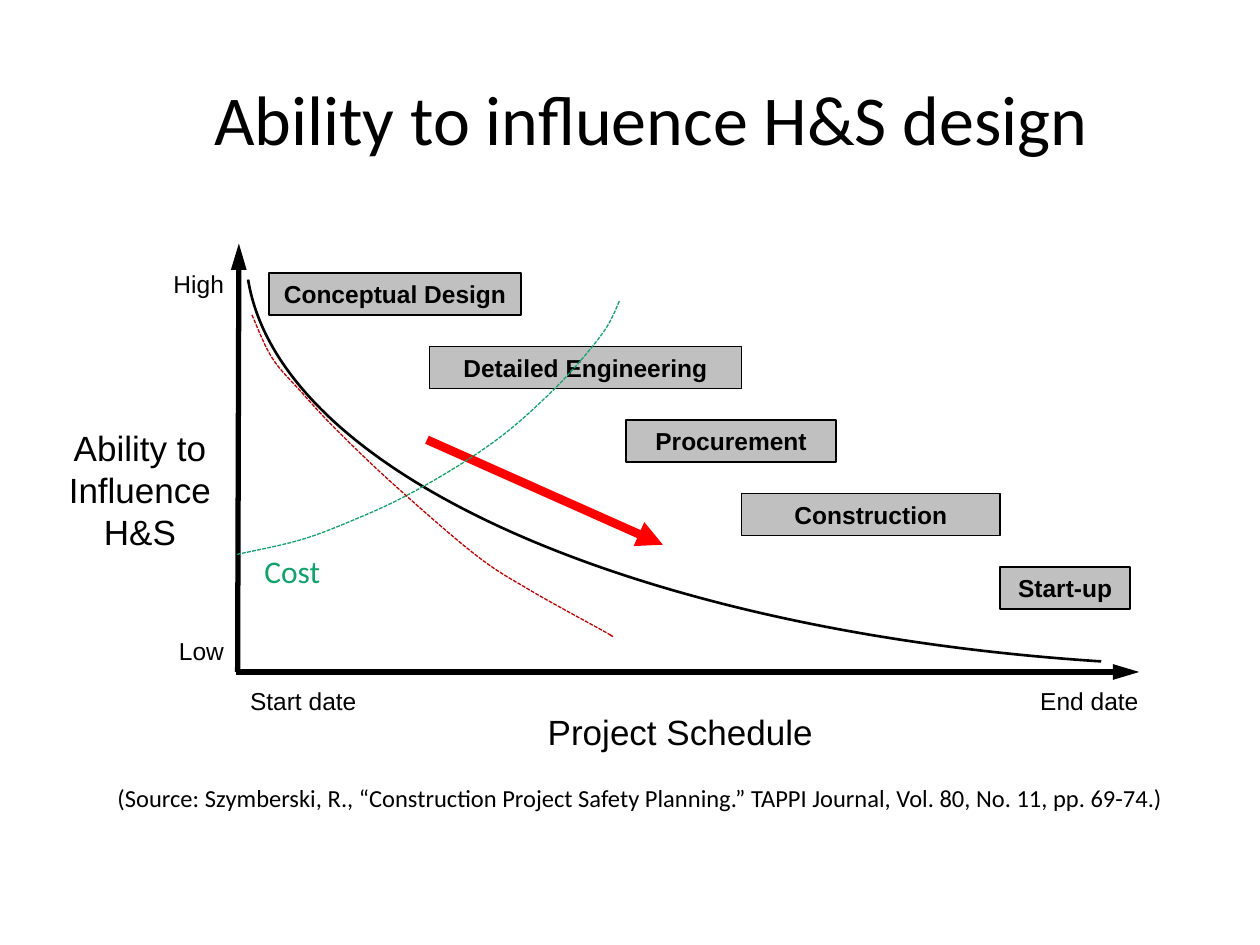
"""Build a slide on how the ability to influence H&S design falls over a project."""
from dataclasses import dataclass

from lxml import etree
from pptx import Presentation
from pptx.dml.color import RGBColor
from pptx.enum.dml import MSO_LINE
from pptx.enum.shapes import MSO_CONNECTOR, MSO_SHAPE
from pptx.enum.text import MSO_ANCHOR, PP_ALIGN
from pptx.oxml.ns import qn
from pptx.shapes.base import BaseShape
from pptx.slide import Slide
from pptx.util import Pt

LEFT, CENTER, RIGHT = PP_ALIGN.LEFT, PP_ALIGN.CENTER, PP_ALIGN.RIGHT
TOP, MIDDLE = MSO_ANCHOR.TOP, MSO_ANCHOR.MIDDLE
RECTANGLE, STRAIGHT = MSO_SHAPE.RECTANGLE, MSO_CONNECTOR.STRAIGHT
DASHED = MSO_LINE.SQUARE_DOT

BLACK = RGBColor(0x00, 0x00, 0x00)
GRAY = RGBColor(0xC0, 0xC0, 0xC0)
RED = RGBColor(0xFF, 0x00, 0x00)
DARK_RED = RGBColor(0xC0, 0x00, 0x00)
GREEN = RGBColor(0x12, 0xA2, 0x6B)

PHASE_TOP, PHASE_STEP, PHASE_HEIGHT = 156, 42, 24

Point = tuple[float, float]


@dataclass(frozen=True)
class Phase:
    """A project phase and its horizontal extent."""
    name: str
    left: float
    width: float


@dataclass(frozen=True)
class Label:
    """A piece of free-standing text."""
    text: str
    left: float
    top: float
    width: float
    height: float
    size: float = 14
    font: str = "Arial"
    align: PP_ALIGN = LEFT
    anchor: MSO_ANCHOR = TOP
    color: RGBColor = BLACK


@dataclass(frozen=True)
class Arrow:
    """A straight line with a head at its end."""
    start: Point
    end: Point
    width: float
    color: RGBColor = BLACK
    head_length: str = "lg"


PHASES = [
    Phase("Conceptual Design", 153.8, 144),
    Phase("Detailed Engineering", 245.3, 178.5),
    Phase("Procurement", 357.8, 120),
    Phase("Construction", 423.8, 147.7),
    Phase("Start-up", 571.5, 74.3),
]
LABELS = [
    Label("Ability to influence H&S design", 48, 18, 648, 98, 40, "Calibri", CENTER, MIDDLE),
    Label("(Source: Szymberski, R., “Construction Project Safety Planning.” "
          "TAPPI Journal, Vol. 80, No. 11, pp. 69-74.)", 60, 444, 624, 34.5, font="Calibri"),
    Label("High", 87.6, 150, 47.5, 24.5, align=RIGHT),
    Label("Low", 87.6, 360, 47.5, 26, align=RIGHT),
    Label("Start date", 135.8, 388.5, 83.5, 19.5),
    Label("End date", 577.2, 388.5, 80.5, 19.5, align=RIGHT),
    Label("Ability to Influence H&S", 22, 240, 116, 90, 20, align=CENTER),
    Label("Project Schedule", 291.5, 402.5, 194.5, 27.5, 20, align=CENTER),
    Label("Cost", 144, 312, 114, 29, 18, "Calibri", color=GREEN),
]
ARROWS = [
    Arrow((135.8, 384), (136.5, 139.2), 3),
    Arrow((135, 384), (651, 384), 3),
    Arrow((244, 251.3), (378.8, 311.3), 5, RED, "med"),
]
INFLUENCE_CONTROLS = [(141.8, 159.8), (159.8, 270.7), (362.2, 360.7), (629.3, 378)]
COST_KNOTS = [
    (135.4, 316.8), (172.8, 308.2), (206.6, 295.2), (232.6, 283), (261.4, 266.4),
    (285.8, 249.8), (306, 232.6), (326.2, 212.4), (345.6, 188.6), (354.2, 171.4),
]
DECLINE_KNOTS = [
    (144, 180), (155.5, 204.5), (172.1, 223.9), (191.5, 244.8), (224.6, 276.5),
    (271.4, 316.8), (302.4, 337), (346.3, 361.4), (348.5, 362.9),
]


def write_text(shape: BaseShape, text: str, *, size: float, font: str, align: PP_ALIGN,
               anchor: MSO_ANCHOR, color: RGBColor, bold: bool = False) -> None:
    """Put one formatted paragraph into a shape."""
    frame = shape.text_frame
    frame.word_wrap = True
    frame.vertical_anchor = anchor
    para = frame.paragraphs[0]
    para.alignment = align
    span = para.add_run()
    span.text = text
    span.font.size = Pt(size)
    span.font.name = font
    span.font.bold = bold
    span.font.color.rgb = color


def add_label(page: Slide, label: Label) -> None:
    """Draw a text box."""
    box = page.shapes.add_textbox(Pt(label.left), Pt(label.top), Pt(label.width), Pt(label.height))
    write_text(box, label.text, size=label.size, font=label.font, align=label.align,
               anchor=label.anchor, color=label.color)


def add_phase(page: Slide, phase: Phase, top: float) -> None:
    """Draw a phase as a gray bar."""
    bar = page.shapes.add_shape(RECTANGLE, Pt(phase.left), Pt(top), Pt(phase.width),
                                Pt(PHASE_HEIGHT))
    bar.shadow.inherit = False
    bar.fill.solid()
    bar.fill.fore_color.rgb = GRAY
    bar.line.color.rgb = BLACK
    bar.line.width = Pt(0.75)
    write_text(bar, phase.name, size=14, font="Arial", align=CENTER, anchor=MIDDLE,
               color=BLACK, bold=True)


def add_arrow(page: Slide, arrow: Arrow) -> None:
    """Draw a connector with a triangular head."""
    connector = page.shapes.add_connector(STRAIGHT, *map(Pt, arrow.start + arrow.end))
    connector.line.color.rgb = arrow.color
    connector.line.width = Pt(arrow.width)
    properties = connector._element.spPr
    etree.SubElement(properties.find(qn("a:ln")), qn("a:tailEnd"), type="triangle",
                     w="med", len=arrow.head_length)
    etree.SubElement(properties, qn("a:effectLst"))


def spline(knots: list[Point]) -> list[Point]:
    """Return the cubic control points of a smooth curve through all knots."""
    padded = [knots[0], *knots, knots[-1]]
    controls = [knots[0]]
    for before, start, end, after in zip(padded, padded[1:], padded[2:], padded[3:]):
        leave = tuple(s + (e - b) / 6 for b, s, e in zip(before, start, end))
        arrive = tuple(e - (a - s) / 6 for s, e, a in zip(start, end, after))
        controls += [leave, arrive, end]
    return controls


def add_curve(page: Slide, controls: list[Point], color: RGBColor, width: float,
              dash: MSO_LINE | None = None) -> None:
    """Draw an open, unfilled outline of cubic segments."""
    start, *rest = [(Pt(x), Pt(y)) for x, y in controls]
    builder = page.shapes.build_freeform(*start)
    builder.add_line_segments(rest, close=False)
    curve = builder.convert_to_shape()
    lines = list(curve._element.iter(qn("a:lnTo")))
    for first in range(0, len(lines), 3):
        cubic = etree.Element(qn("a:cubicBezTo"))
        lines[first].addprevious(cubic)
        for line in lines[first:first + 3]:
            cubic.append(line[0])
            line.getparent().remove(line)
    curve.shadow.inherit = False
    curve.fill.background()
    curve.line.color.rgb = color
    curve.line.width = Pt(width)
    curve.line.dash_style = dash


def main() -> None:
    """Assemble and save the deck."""
    deck = Presentation()
    deck.slide_width, deck.slide_height = Pt(720), Pt(540)
    page = deck.slides.add_slide(deck.slide_layouts[6])
    for index, phase in enumerate(PHASES):
        add_phase(page, phase, PHASE_TOP + index * PHASE_STEP)
    for label in LABELS:
        add_label(page, label)
    for arrow in ARROWS:
        add_arrow(page, arrow)
    add_curve(page, INFLUENCE_CONTROLS, BLACK, 1.5)
    add_curve(page, spline(COST_KNOTS), GREEN, 0.75, DASHED)
    add_curve(page, spline(DECLINE_KNOTS), DARK_RED, 0.75, DASHED)
    deck.save("out.pptx")


if __name__ == "__main__":
    main()
